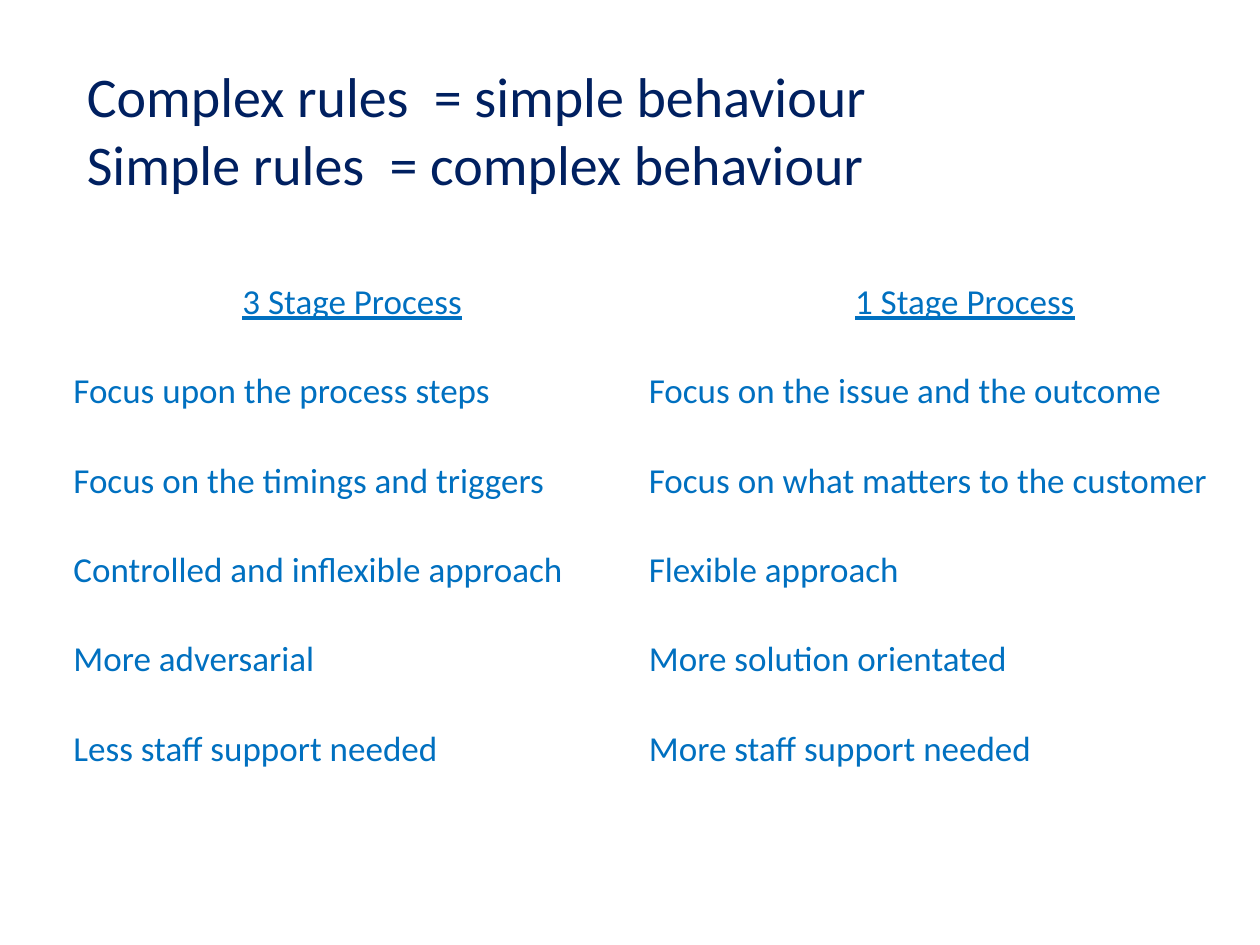
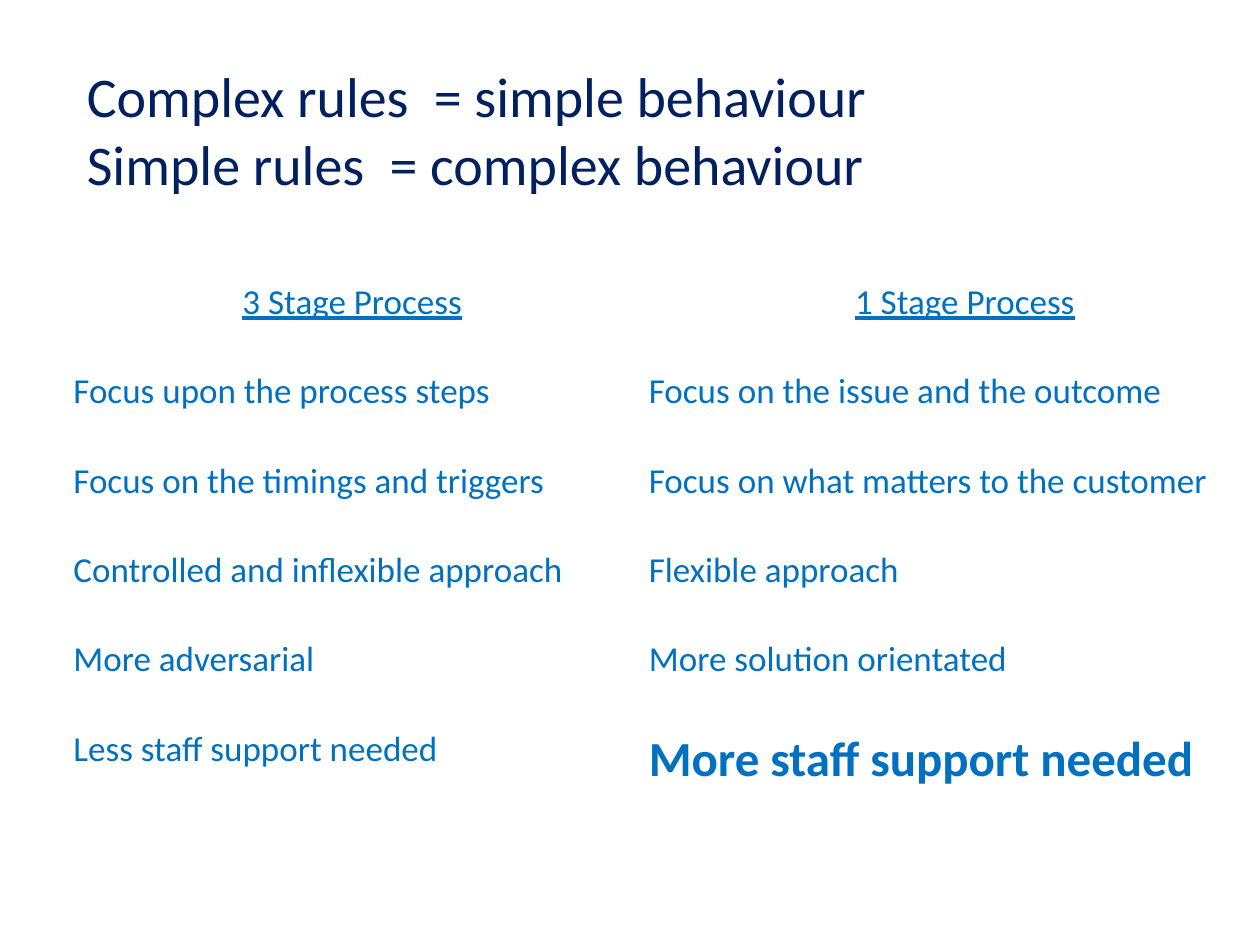
"""Build two slides comparing a three stage and a one stage process."""
from pptx import Presentation
from pptx.dml.color import RGBColor as RGB
from pptx.enum.text import MSO_ANCHOR as ANCHOR, PP_ALIGN as ALIGN
from pptx.util import Cm, Pt

THEME = {
    "title": {"name": "Calibri", "size": Pt(32), "color": RGB(0x00, 0x20, 0x60)},
    "body": {"name": "Calibri", "size": Pt(20), "color": RGB(0x00, 0x70, 0xC0), "bold": False},
    "head": {"underline": True},
    "strong": {"size": Pt(28), "bold": True},
}
TITLE = "Complex rules  = simple behaviour\vSimple rules  = complex behaviour"
ROWS = [
    ("3 Stage Process", "1 Stage Process"),
    ("Focus upon the process steps", "Focus on the issue and the outcome"),
    ("Focus on the timings and triggers", "Focus on what matters to the customer"),
    ("Controlled and inflexible approach", "Flexible approach"),
    ("More adversarial", "More solution orientated"),
    ("Less staff support needed", "More staff support needed"),
]
COL_WIDTHS = (Cm(11.6), Cm(13.1))
ROW_HEIGHT = Cm(1.8)
CELL_FORMAT = {
    "margin_left": Cm(0.18), "margin_right": Cm(0.18),
    "margin_top": 0, "margin_bottom": 0, "vertical_anchor": ANCHOR.TOP,
}
BOX_FORMAT = {"word_wrap": True, "vertical_anchor": ANCHOR.MIDDLE}


def apply(obj, values):
    for key, value in values.items():
        setattr(obj, key, value)


def write(p, text, *styles):
    p.text = text
    for r in p.runs:
        for style in styles:
            apply(r.font, {k: v for k, v in style.items() if k != "color"})
            if "color" in style:
                r.font.color.rgb = style["color"]


prs = Presentation()
prs.slide_width, prs.slide_height = Cm(25.4), Cm(19.05)

for emphasised in (None, "More staff support needed"):
    s = prs.slides.add_slide(prs.slide_layouts[6])
    tf = s.shapes.add_textbox(Cm(1.5), Cm(1.12), Cm(22), Cm(2.97)).text_frame
    apply(tf, BOX_FORMAT)
    write(tf.paragraphs[0], TITLE, THEME["title"])

    table = s.shapes.add_table(
        len(ROWS), len(COL_WIDTHS), Cm(1.3), Cm(5.54),
        sum(COL_WIDTHS), ROW_HEIGHT * len(ROWS)).table
    apply(table, {"first_row": False, "horz_banding": False})
    for column, width in zip(table.columns, COL_WIDTHS):
        column.width = width
    for i, texts in enumerate(ROWS):
        table.rows[i].height = ROW_HEIGHT
        for j, text in enumerate(texts):
            cell = table.cell(i, j)
            cell.fill.background()
            apply(cell, CELL_FORMAT)
            p = cell.text_frame.paragraphs[0]
            styles = [THEME["body"]]
            if i == 0:
                styles.append(THEME["head"])
            if text == emphasised:
                styles.append(THEME["strong"])
            write(p, text, *styles)
            apply(p, {"alignment": ALIGN.LEFT if i else ALIGN.CENTER, "line_spacing": 1.15})

prs.save("out.pptx")
